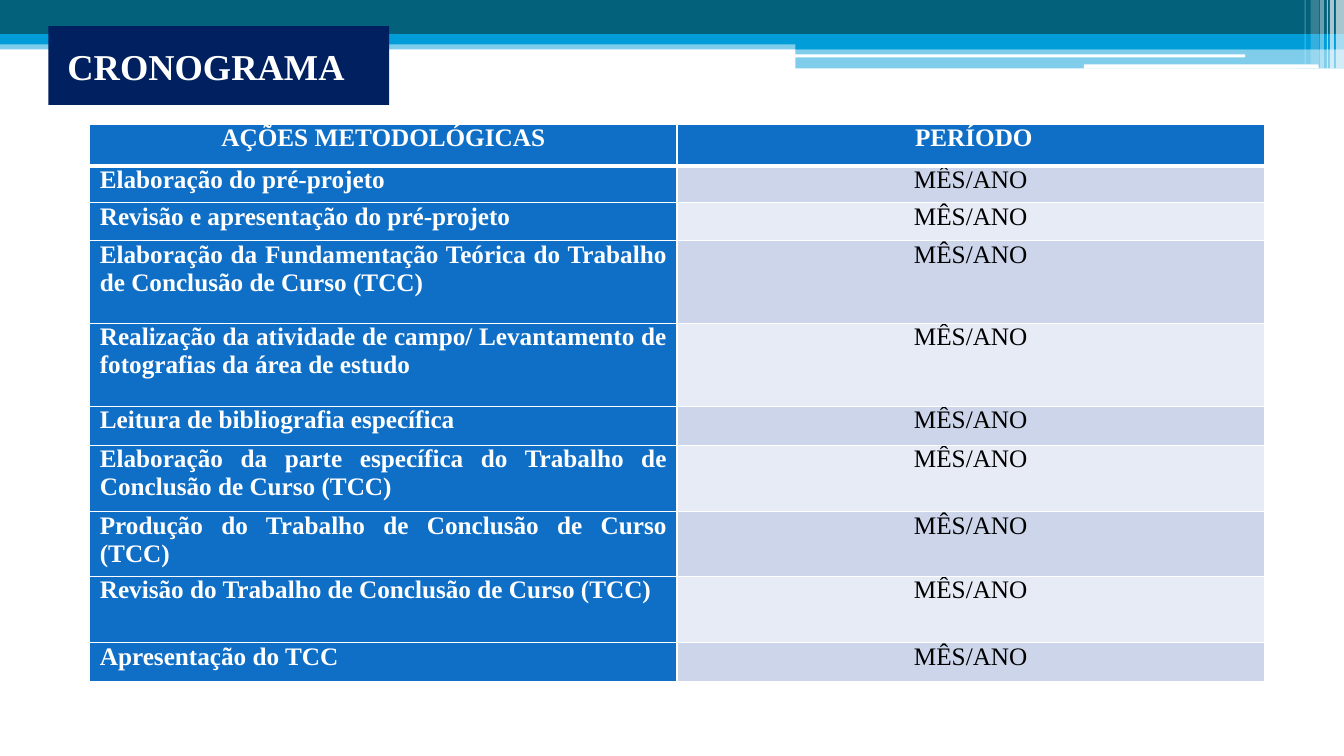
import pptx
import pptx.chart.data
import pptx.dml.color
import pptx.enum.shapes
import pptx.enum.text
import pptx.oxml
import pptx.oxml.ns
import pptx.util
from pptx.util import Inches

RGB = pptx.dml.color.RGBColor
SHAPE = pptx.enum.shapes.MSO_SHAPE
ALIGN = pptx.enum.text.PP_ALIGN
ANCHOR = pptx.enum.text.MSO_ANCHOR

WHITE = RGB(0xFF, 0xFF, 0xFF)
BLACK = RGB(0, 0, 0)
TEAL = RGB(0x04, 0x61, 0x7B)
CYAN = RGB(0x00, 0x9D, 0xD9)
NAVY = RGB(0x00, 0x20, 0x60)
BLUE = RGB(0x0F, 0x6F, 0xC6)
BANDS = (RGB(0xCC, 0xD5, 0xEA), RGB(0xE7, 0xEB, 0xF5))
FONT = "Times New Roman"

HEADS = ("AÇÕES METODOLÓGICAS", " PERÍODO")
HEAD_ROW = 0.42
PERIOD = "MÊS/ANO"
STEPS = (
    ("Elaboração do pré-projeto", 0.36),
    ("Revisão e apresentação do pré-projeto", 0.38),
    ("Elaboração da Fundamentação Teórica do Trabalho de Conclusão de Curso (TCC)", 0.82),
    ("Realização da atividade de campo/ Levantamento de fotografias da área de estudo", 0.82),
    ("Leitura de bibliografia específica", 0.39),
    ("Elaboração da parte específica do Trabalho de Conclusão de Curso (TCC)", 0.66),
    ("Produção do Trabalho de Conclusão de Curso (TCC)", 0.64),
    ("Revisão do Trabalho de Conclusão de Curso (TCC)", 0.66),
    ("Apresentação do TCC", 0.38),
)

# Left, top, width, height, colour, opacity in percent
BARS = (
    (0, 0.4, 13.33, 0.09, CYAN, 50),
    (0, 0, 13.33, 0.34, TEAL, 100),
    (0, 0.34, 13.33, 0.1, CYAN, 100),
    (7.89, 0.39, 5.44, 0.1, CYAN, 100),
    (7.89, 0.48, 5.44, 0.2, CYAN, 50),
)
# Left, top, width, height
LINES = ((7.88, 0.54, 4.47, 0.03), (10.75, 0.64, 2.33, 0.04))
# Left, width, height, opacity in percent
STRIPES = (
    (13.25, 0.08, 0.68, 65),
    (13.19, 0.04, 0.68, 65),
    (13.16, 0.01, 0.68, 60),
    (13.09, 0.04, 0.68, 40),
    (13, 0.08, 0.64, 20),
    (12.94, 0.01, 0.64, 30),
)


def add_block(slide, box, color, alpha=100, kind=SHAPE.RECTANGLE):
    block = slide.shapes.add_shape(kind, *map(Inches, box))
    block.shadow.inherit = False
    block.line.fill.background()
    block.fill.solid()
    block.fill.fore_color.rgb = color
    if alpha < 100:
        tint = block.fill._xPr.find(".//" + pptx.oxml.ns.qn("a:srgbClr"))
        pptx.oxml.ns.qn("a:alpha")
        node = tint.makeelement(pptx.oxml.ns.qn("a:alpha"), {"val": str(alpha * 1000)})
        tint.append(node)
    return block


def add_text(frame, text, size, color, bold, align):
    para = frame.paragraphs[0]
    para.alignment = align
    run = para.add_run()
    run.text = text
    run.font.name = FONT
    run.font.size = pptx.util.Pt(size)
    run.font.bold = bold
    run.font.color.rgb = color


def add_banner(slide, left, top):
    for x, y, width, height, color, alpha in BARS:
        add_block(slide, (left + x, top + y, width, height), color, alpha)
    for x, y, width, height in LINES:
        add_block(slide, (left + x, top + y, width, height), WHITE,
                  kind=SHAPE.ROUNDED_RECTANGLE)
    for x, width, height, alpha in STRIPES:
        add_block(slide, (left + x, top, width, height), WHITE, alpha)


def add_title(slide, box):
    frame = add_block(slide, box, NAVY).text_frame
    frame.word_wrap = True
    frame.vertical_anchor = ANCHOR.MIDDLE
    add_text(frame, " CRONOGRAMA", 26, WHITE, True, ALIGN.LEFT)


def set_edges(cell, base):
    """Draw white borders, the bottom one base points wide."""
    props = cell._tc.get_or_add_tcPr()
    space = pptx.oxml.ns.nsdecls("a")
    for spot, (side, width) in enumerate((("L", 1), ("R", 1), ("T", 1), ("B", base))):
        edge = pptx.oxml.parse_xml(
            f'<a:ln{side} {space} w="{pptx.util.Pt(width)}"><a:solidFill>'
            f'<a:srgbClr val="{WHITE}"/></a:solidFill></a:ln{side}>')
        props.insert(spot, edge)


def fill_cell(cell, text, fill, color, bold, align, base=1):
    cell.margin_left = cell.margin_right = Inches(0.1)
    cell.margin_top = cell.margin_bottom = 0
    cell.fill.solid()
    cell.fill.fore_color.rgb = fill
    add_text(cell.text_frame, text, 18, color, bold, align)
    set_edges(cell, base)


def add_plan(slide, left, top, width):
    heights = [HEAD_ROW] + [height for _, height in STEPS]
    box = (left, top, width, sum(heights))
    table = slide.shapes.add_table(len(heights), 2, *map(Inches, box)).table
    for column in table.columns:
        column.width = Inches(width / 2)
    for row, height in zip(table.rows, heights):
        row.height = Inches(height)
    for col, head in enumerate(HEADS):
        fill_cell(table.cell(0, col), head, BLUE, WHITE, True, ALIGN.CENTER, 3)
    for row, (step, _) in enumerate(STEPS, 1):
        fill_cell(table.cell(row, 0), step, BLUE, WHITE, True, ALIGN.JUSTIFY)
        fill_cell(table.cell(row, 1), PERIOD, BANDS[(row - 1) % 2], BLACK, False,
                  ALIGN.CENTER)
    for col in range(2):
        top_edge = table.cell(1, col)._tc.tcPr.find(pptx.oxml.ns.qn("a:lnT"))
        top_edge.set("w", str(pptx.util.Pt(3)))


def main():
    deck = pptx.Presentation()
    deck.slide_width = Inches(13.33)
    deck.slide_height = Inches(7.5)
    slide = deck.slides.add_slide(deck.slide_layouts[6])
    add_banner(slide, 0, 0)
    add_title(slide, (0.48, 0.26, 3.38, 0.78))
    add_plan(slide, 0.89, 1.23, 11.65)
    deck.save("out.pptx")


if __name__ == "__main__":
    main()
